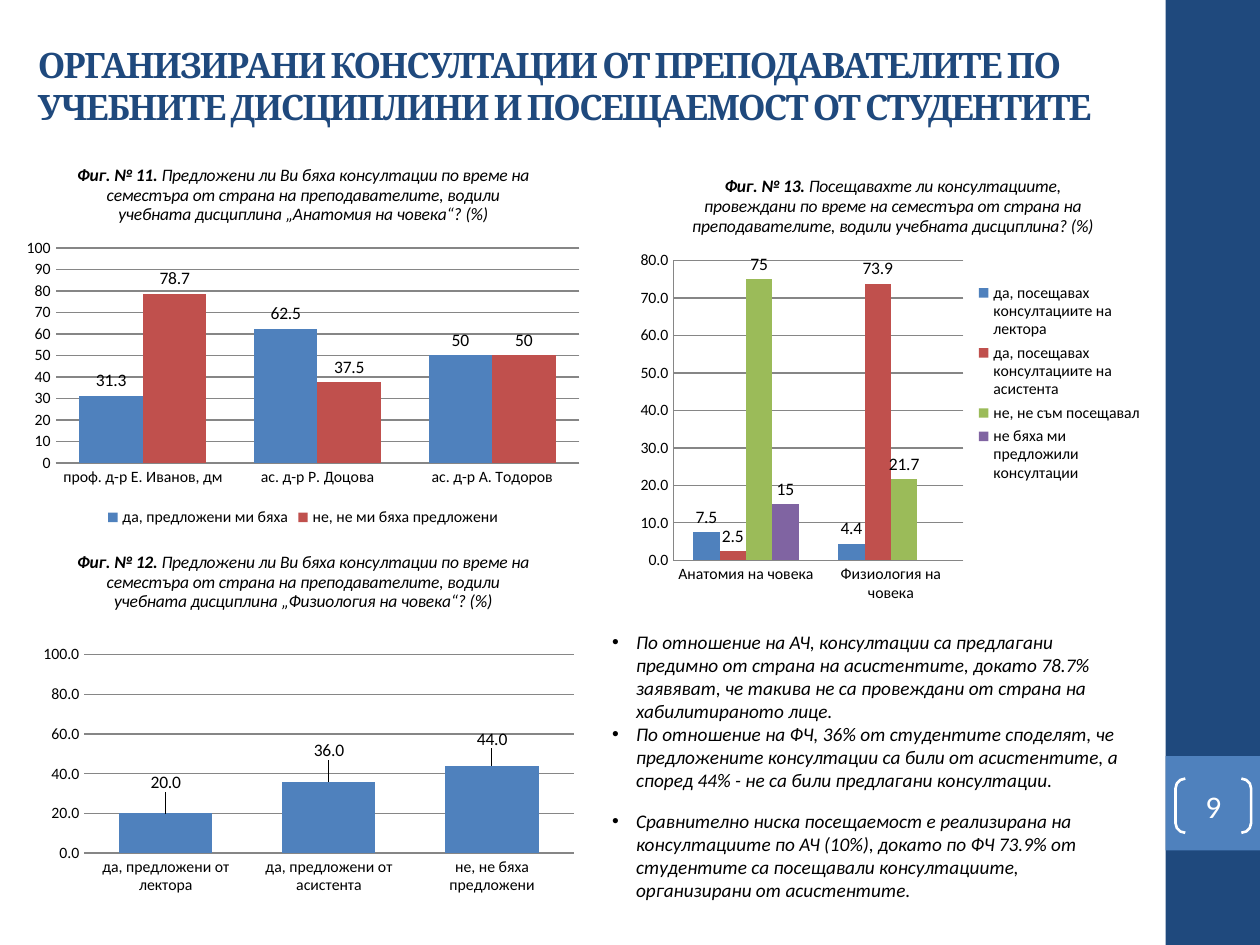
from lxml import etree
from pptx import Presentation
from pptx import util as u
from pptx.chart.data import CategoryChartData
from pptx.dml.color import RGBColor
from pptx.enum import chart as ch, shapes, text
from pptx.oxml import parse_xml
from pptx.oxml.ns import nsdecls, qn

COLORS = {
    "navy": "1F497D", "blue": "4F81BD", "red": "C0504D", "green": "9BBB59",
    "purple": "8064A2", "grid": "868686", "black": "000000", "white": "FFFFFF",
}
SERIES_COLORS = ["blue", "red", "green", "purple"]
DECIMAL = "0.0;[Red]0.0"


def style(font, size, color, name="Calibri", bold=False, italic=False):
    font.size = u.Pt(size)
    font.name = name
    font.bold = bold
    font.italic = italic
    font.color.rgb = RGBColor.from_string(COLORS[color])


def manual_layout(x, y, **more):
    parts = {**more, "x": x, "y": y}
    order = ["layoutTarget", "xMode", "yMode", "x", "y", "w", "h"]
    inner = "".join(f'<c:{key} val="{parts[key]}"/>' for key in order if key in parts)
    return parse_xml(f'<c:layout {nsdecls("c")}><c:manualLayout>{inner}</c:manualLayout></c:layout>')


deck = Presentation()
deck.slide_width, deck.slide_height = u.Inches(10), u.Inches(7.5)
page = deck.slides.add_slide(deck.slide_layouts[5])

for top, height, color in [(0, 7.5, "navy"), (6, 0.75, "blue")]:
    band = page.shapes.add_shape(shapes.MSO_SHAPE.RECTANGLE, u.Inches(9.25), u.Inches(top),
                                 u.Inches(0.75), u.Inches(height))
    band.shadow.inherit = False
    band.fill.solid()
    band.fill.fore_color.rgb = RGBColor.from_string(COLORS[color])
    band.line.fill.background()

title = page.shapes.title
title.left, title.top = u.Inches(0.2), u.Inches(0.21)
title.width, title.height = u.Inches(8.58), u.Inches(0.94)
title.text_frame.vertical_anchor = text.MSO_ANCHOR.MIDDLE
title.text_frame.auto_size = text.MSO_AUTO_SIZE.NONE
para = title.text_frame.paragraphs[0]
para.alignment = text.PP_ALIGN.LEFT
span = para.add_run()
span.text = ("ОРГАНИЗИРАНИ КОНСУЛТАЦИИ ОТ ПРЕПОДАВАТЕЛИТЕ ПО "
             "УЧЕБНИТЕ ДИСЦИПЛИНИ И ПОСЕЩАЕМОСТ ОТ СТУДЕНТИТЕ")
style(span.font, 20, "navy", "Cambria", bold=True)
span.font._element.set("spc", "-100")

number = page.shapes.add_shape(shapes.MSO_SHAPE.DOUBLE_BRACKET, u.Inches(9.33), u.Inches(6.18),
                               u.Inches(0.6), u.Inches(0.43))
number.adjustments[0] = 0.18
number.shadow.inherit = False
number.fill.background()
number.line.color.rgb = RGBColor.from_string(COLORS["white"])
number.line.width = u.Pt(1.5)
frame = number.text_frame
frame.margin_left = frame.margin_right = frame.margin_top = frame.margin_bottom = 0
frame.vertical_anchor = text.MSO_ANCHOR.MIDDLE
para = frame.paragraphs[0]
para.alignment = text.PP_ALIGN.CENTER
span = para.add_run()
span.text = "9"
style(span.font, 18, "white")

findings = [
    ("По отношение на АЧ, консултации са предлагани предимно от страна на асистентите, "
     "докато 78.7% заявяват, че такива не са провеждани от страна на хабилитираното лице.", 0),
    ("По отношение на ФЧ, 36% от студентите споделят, че предложените консултации са били "
     "от асистентите, а според 44% - не са били предлагани консултации.", 10),
    ("Сравнително ниска посещаемост е реализирана на консултациите по АЧ (10%), докато по ФЧ "
     "73.9% от студентите са посещавали консултациите, организирани от асистентите.", 10),
]
box = page.shapes.add_textbox(u.Inches(4.76), u.Inches(4.95), u.Inches(4.33), u.Inches(2.42))
box.text_frame.word_wrap = True
for index, (finding, after) in enumerate(findings):
    para = box.text_frame.add_paragraph() if index else box.text_frame.paragraphs[0]
    para.space_after = u.Pt(after)
    span = para.add_run()
    span.text = finding
    style(span.font, 11, "black", italic=True)
    props = para._p.get_or_add_pPr()
    props.set("marL", str(u.Inches(0.19)))
    props.set("indent", str(-u.Inches(0.19)))
    etree.SubElement(props, qn("a:buFont")).set("typeface", "Arial")
    etree.SubElement(props, qn("a:buChar")).set("char", "•")

offered = "Предложени ли Ви бяха консултации по време на семестъра от страна на преподавателите, водили учебната дисциплина "
charts = [
    dict(at=(0.12, 1.15, 4.57, 3.07), figure="Фиг. № 11. ",
         question=offered + "„Анатомия на човека“? (%)",
         cats=["проф. д-р Е. Иванов, дм", "ас. д-р Р. Доцова", "ас. д-р А. Тодоров"],
         series=[("да, предложени ми бяха", [31.3, 62.5, 50]),
                 ("не, не ми бяха предложени", [78.7, 37.5, 50])],
         gap=75, top=100, step=10, axis_format="General", label_format="General",
         legend=ch.XL_LEGEND_POSITION.BOTTOM, axis_line=False),
    dict(at=(0.12, 4.22, 4.57, 3.15), figure="Фиг. № 12. ",
         question=offered + "„Физиология на човека“? (%)",
         cats=["да, предложени от лектора", "да, предложени от асистента", "не, не бяха предложени"],
         series=[("Series 1", [20, 36, 44])],
         gap=75, top=100, step=20, axis_format=DECIMAL, label_format=DECIMAL,
         legend=None, axis_line=False, plot=(0.12, 0.31, 0.85, 0.5), lifts=[-0.04, -0.04, -0.03]),
    dict(at=(5, 1.23, 4.17, 3.62), figure="Фиг. № 13. ",
         question="Посещавахте ли консултациите, провеждани по време на семестъра от страна на "
                  "преподавателите, водили учебната дисциплина? (%)",
         cats=["Анатомия на човека", "Физиология на човека"],
         series=[("да, посещавах консултациите на лектора", [7.5, 4.4]),
                 ("да, посещавах консултациите на асистента", [2.5, 73.9]),
                 ("не, не съм посещавал", [75, 21.7]),
                 ("не бяха ми предложили консултации", [15, None])],
         gap=150, top=80, step=10, axis_format="0.0", label_format="General",
         legend=ch.XL_LEGEND_POSITION.RIGHT, axis_line=True),
]

for info in charts:
    data = CategoryChartData(number_format=info["label_format"])
    data.categories = info["cats"]
    for name, values in info["series"]:
        data.add_series(name, values)
    chart = page.shapes.add_chart(ch.XL_CHART_TYPE.COLUMN_CLUSTERED,
                                  *[u.Inches(length) for length in info["at"]], data).chart
    style(chart.font, 10, "black")

    para = chart.chart_title.text_frame.paragraphs[0]
    for words, bold in [(info["figure"], True), (info["question"], False)]:
        span = para.add_run()
        span.text = words
        style(span.font, 10, "black", bold=bold, italic=True)
    chart.chart_title.include_in_layout = False

    chart.has_legend = info["legend"] is not None
    if chart.has_legend:
        chart.legend.position = info["legend"]
        chart.legend.include_in_layout = False
        style(chart.legend.font, 9, "black")

    values_axis = chart.value_axis
    values_axis.minimum_scale, values_axis.maximum_scale = 0, info["top"]
    values_axis.major_unit = info["step"]
    values_axis.tick_labels.number_format = info["axis_format"]
    values_axis.tick_labels.number_format_is_linked = False
    grid = values_axis.major_gridlines.format.line
    for axis in (chart.category_axis, values_axis):
        axis.major_tick_mark = ch.XL_TICK_MARK.NONE
        style(axis.tick_labels.font, 9, "black")
    for line in (grid, chart.category_axis.format.line, values_axis.format.line):
        line.color.rgb = RGBColor.from_string(COLORS["grid"])
        line.width = u.Pt(0.75)
    if not info["axis_line"]:
        values_axis.format.line.fill.background()

    plot = chart.plots[0]
    plot.gap_width = info["gap"]
    plot.vary_by_categories = False
    for series, color in zip(plot.series, SERIES_COLORS):
        series.format.fill.solid()
        series.format.fill.fore_color.rgb = RGBColor.from_string(COLORS[color])
        series.invert_if_negative = False
        labels = series.data_labels
        labels.show_value = True
        labels.position = ch.XL_LABEL_POSITION.OUTSIDE_END
        labels.number_format = info["label_format"]
        labels.number_format_is_linked = False
        style(labels.font, 10, "black")
        for index, lift in enumerate(info.get("lifts", [])):
            label = series.points[index].data_label
            label.position = ch.XL_LABEL_POSITION.OUTSIDE_END
            style(label.font, 10, "black")
            mark = labels._element.findall(qn("c:dLbl"))[index]
            mark.find(qn("c:idx")).addnext(manual_layout(0, lift))

    if "plot" in info:
        x, y, w, h = info["plot"]
        area = chart._chartSpace.chart.plotArea
        for old in area.findall(qn("c:layout")):
            area.remove(old)
        area.insert(0, manual_layout(x, y, w=w, h=h, layoutTarget="inner", xMode="edge", yMode="edge"))

deck.save("out.pptx")
